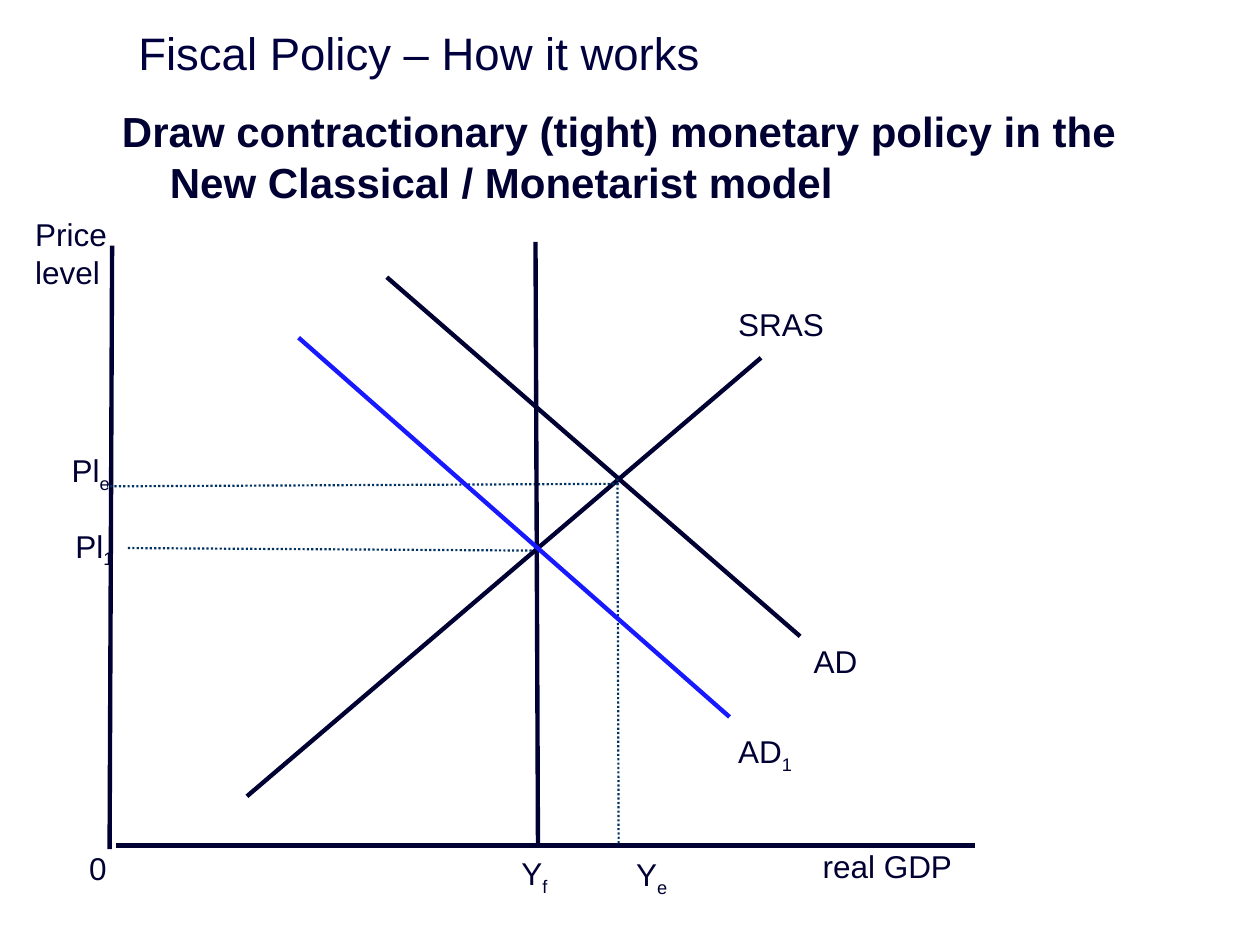
from dataclasses import dataclass

import pptx
import pptx.dml.color
import pptx.enum.dml
import pptx.enum.shapes
import pptx.enum.text
import pptx.oxml.ns
import pptx.slide
import pptx.text.text
import pptx.util
from lxml import etree
from pptx.dml.color import RGBColor
from pptx.util import Inches

TITLE_NAVY = RGBColor(0x00, 0x00, 0x3E)
NAVY = RGBColor(0x00, 0x00, 0x32)
GUIDE_BLUE = RGBColor(0x00, 0x32, 0x64)
SHIFT_BLUE = RGBColor(0x19, 0x19, 0xFF)
FONT = "Arial"


@dataclass
class Line:
    start: tuple[float, float]
    end: tuple[float, float]
    color: RGBColor = NAVY
    dotted: bool = False


@dataclass
class Label:
    left: float
    top: float
    width: float
    lines: tuple[str, ...]
    subscript: str = ""
    height: float = 0.4


LINES = [
    Line((0.89, 1.95), (0.87, 6.74)),  # price axis
    Line((7.74, 6.71), (0.92, 6.71)),  # output axis
    Line((6.04, 2.84), (1.96, 6.32)),  # SRAS
    Line((3.07, 2.2), (6.35, 5.05)),  # AD
    Line((4.91, 3.84), (0.85, 3.86), GUIDE_BLUE, True),
    Line((4.9, 3.8), (4.91, 6.71), GUIDE_BLUE, True),
    Line((4.25, 1.92), (4.27, 6.72)),  # full-employment output
    Line((2.37, 2.68), (5.79, 5.69), SHIFT_BLUE),  # AD1
    Line((4.22, 4.37), (1.01, 4.35), GUIDE_BLUE, True),
]

LABELS = [
    Label(6.43, 6.67, 1.29, ("real GDP",)),
    Label(0.61, 6.69, 0.64, ("0",)),
    Label(0.18, 1.66, 0.88, ("Price", "level"), height=0.71),
    Label(5.76, 2.37, 0.9, ("SRAS",)),
    Label(6.36, 5.05, 0.81, ("AD",)),
    Label(0.5, 4.13, 0.75, ("Pl",), "1"),
    Label(0.47, 3.53, 0.75, ("Pl",), "e"),
    Label(4.95, 6.74, 0.55, ("Y",), "e"),
    Label(4.04, 6.73, 0.44, ("Y",), "f"),
    Label(5.76, 5.76, 0.81, ("AD",), "1"),
]


def add_frame(slide: pptx.slide.Slide, left: float, top: float,
              width: float, height: float) -> pptx.text.text.TextFrame:
    box = slide.shapes.add_textbox(Inches(left), Inches(top), Inches(width), Inches(height))
    box.text_frame.word_wrap = True
    return box.text_frame


def add_span(para, text: str, size: float, color: RGBColor = NAVY, bold: bool = False):
    span = para.add_run()
    span.text = text
    span.font.name = FONT
    span.font.size = pptx.util.Pt(size)
    span.font.color.rgb = color
    span.font.bold = bold
    return span


def add_headings(slide: pptx.slide.Slide) -> None:
    title = add_frame(slide, 1, 0.16, 9, 0.51)
    title.vertical_anchor = pptx.enum.text.MSO_ANCHOR.MIDDLE
    add_span(title.paragraphs[0], "Fiscal Policy – How it works", 26, TITLE_NAVY)

    task = add_frame(slide, 0.87, 0.79, 8.83, 4.95).paragraphs[0]
    properties = task._p.get_or_add_pPr()
    properties.set("marL", str(Inches(0.38)))
    properties.set("indent", str(Inches(-0.38)))
    add_span(task, "Draw contractionary (tight) monetary policy in the "
                   "New Classical / Monetarist model", 24, bold=True)


def add_line(slide: pptx.slide.Slide, line: Line) -> None:
    connector = slide.shapes.add_connector(
        pptx.enum.shapes.MSO_CONNECTOR.STRAIGHT,
        *(Inches(value) for value in line.start + line.end))
    connector.line.color.rgb = line.color
    connector.line.width = pptx.util.Pt(1.25 if line.dotted else 2.5)
    if line.dotted:
        connector.line.dash_style = pptx.enum.dml.MSO_LINE.ROUND_DOT
    etree.SubElement(connector._element.spPr, pptx.oxml.ns.qn("a:effectLst"))


def add_label(slide: pptx.slide.Slide, label: Label) -> None:
    frame = add_frame(slide, label.left, label.top, label.width, label.height)
    frame.auto_size = pptx.enum.text.MSO_AUTO_SIZE.SHAPE_TO_FIT_TEXT
    for index, text in enumerate(label.lines):
        para = frame.add_paragraph() if index else frame.paragraphs[0]
        add_span(para, text, 18)
    if label.subscript:
        span = add_span(para, label.subscript, 18)
        span._r.get_or_add_rPr().set("baseline", "-25000")


def main() -> None:
    deck = pptx.Presentation()
    deck.slide_width, deck.slide_height = Inches(10), Inches(7.5)
    slide = deck.slides.add_slide(deck.slide_layouts[6])
    add_headings(slide)
    for line in LINES:
        add_line(slide, line)
    for label in LABELS:
        add_label(slide, label)
    deck.save("out.pptx")


if __name__ == "__main__":
    main()
